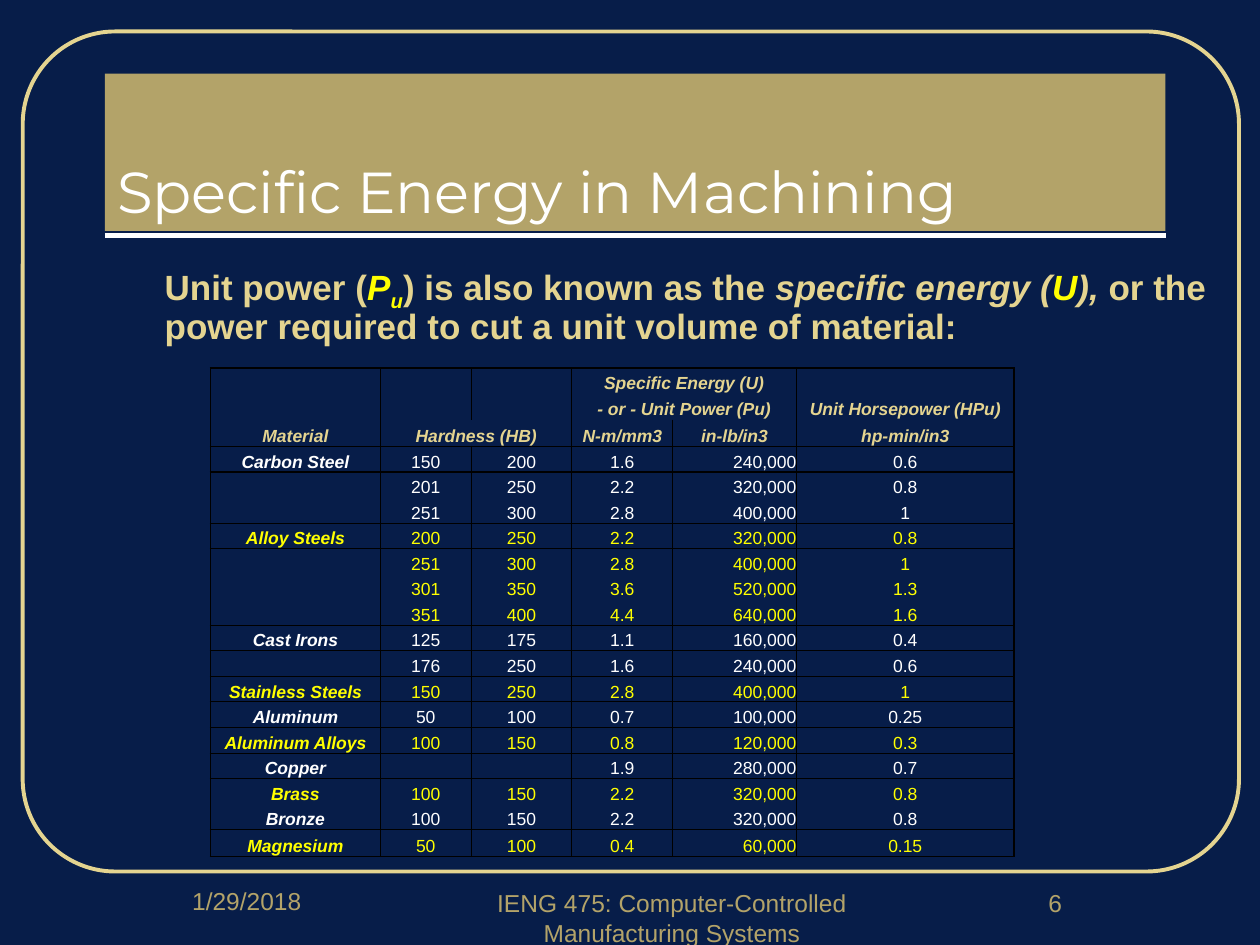
from dataclasses import dataclass

from lxml import etree
from pptx import Presentation
from pptx.dml.color import RGBColor
from pptx.enum.shapes import MSO_CONNECTOR, MSO_SHAPE
from pptx.enum.text import MSO_ANCHOR, PP_ALIGN
from pptx.oxml.ns import qn
from pptx.util import Pt

NAVY = RGBColor(0x07, 0x1D, 0x49)
GOLD = RGBColor(0xB3, 0xA3, 0x69)
SAND = RGBColor(0xE4, 0xD4, 0x90)
YELLOW = RGBColor(0xFF, 0xFF, 0x00)
WHITE = RGBColor(0xFF, 0xFF, 0xFF)

LEFT, CENTER, RIGHT = PP_ALIGN.LEFT, PP_ALIGN.CENTER, PP_ALIGN.RIGHT
BOTTOM = MSO_ANCHOR.BOTTOM
STRAIGHT = MSO_CONNECTOR.STRAIGHT
RECTANGLE, ROUNDED = MSO_SHAPE.RECTANGLE, MSO_SHAPE.ROUNDED_RECTANGLE

NO_STYLE_NO_GRID = "{2D5ABB26-0587-4C30-8999-92F81FD0307C}"


@dataclass(frozen=True)
class Box:
    left: float
    top: float
    width: float
    height: float

    def lengths(self):
        return Pt(self.left), Pt(self.top), Pt(self.width), Pt(self.height)


@dataclass(frozen=True)
class Style:
    size: float
    color: RGBColor
    font: str = "Arial"
    bold: bool = False
    italic: bool = False
    subscript: bool = False


@dataclass(frozen=True)
class Material:
    name: str
    readings: tuple
    closes_group: bool = True


@dataclass(frozen=True)
class Footer:
    text: str
    box: Box


FOOTERS = (
    Footer("1/29/2018", Box(60, 503, 162, 36)),
    Footer("IENG 475: Computer-Controlled Manufacturing Systems", Box(258, 504, 252, 36)),
    Footer("6", Box(540, 504, 126, 36)),
)

DEFINITION = (
    ("Unit power (", Style(20, SAND, bold=True)),
    ("P", Style(20, YELLOW, bold=True, italic=True)),
    ("u", Style(20, YELLOW, bold=True, italic=True, subscript=True)),
    (") is also known as the ", Style(20, SAND, bold=True)),
    ("specific energy (", Style(20, SAND, bold=True, italic=True)),
    ("U", Style(20, YELLOW, bold=True, italic=True)),
    ("), ", Style(20, SAND, bold=True, italic=True)),
    ("or the power required to cut a unit volume of material:", Style(20, SAND, bold=True)),
)

HEADINGS = (
    ("", "", "", "Specific Energy (U)", "", ""),
    ("", "", "", "- or - Unit Power (Pu)", "", "Unit Horsepower (HPu)"),
    ("Material", "Hardness (HB)", "", "N-m/mm3", "in-lb/in3", "hp-min/in3"),
)
HEADING_SPANS = ((0, 3), (1, 3), (2, 1))

MATERIALS = (
    Material("Carbon Steel", (
        ("150", "200", "1.6", "240,000", "0.6"),
        ("201", "250", "2.2", "320,000", "0.8"),
        ("251", "300", "2.8", "400,000", "1"))),
    Material("Alloy Steels", (
        ("200", "250", "2.2", "320,000", "0.8"),
        ("251", "300", "2.8", "400,000", "1"),
        ("301", "350", "3.6", "520,000", "1.3"),
        ("351", "400", "4.4", "640,000", "1.6"))),
    Material("Cast Irons", (
        ("125", "175", "1.1", "160,000", "0.4"),
        ("176", "250", "1.6", "240,000", "0.6"))),
    Material("Stainless Steels", (("150", "250", "2.8", "400,000", "1"),)),
    Material("Aluminum", (("50", "100", "0.7", "100,000", "0.25"),), False),
    Material("Aluminum Alloys", (("100", "150", "0.8", "120,000", "0.3"),)),
    Material("Copper", (("", "", "1.9", "280,000", "0.7"),), False),
    Material("Brass", (("100", "150", "2.2", "320,000", "0.8"),), False),
    Material("Bronze", (("100", "150", "2.2", "320,000", "0.8"),)),
    Material("Magnesium", (("50", "100", "0.4", "60,000", "0.15"),)),
)

COLUMN_WIDTHS = (97.2, 51.8, 57.6, 57.6, 70.6, 124.6)
ROW_HEIGHTS = (14.8, 14.8, 15.3) + (14.6,) * 15 + (15.4,)
COLUMN_RULES = {0: 1, 1: 0.5, 3: 0.5, 5: 0.5, 6: 1}
POUND_COLUMN = 4


def format_run(run, style: Style) -> None:
    font = run.font
    font.name, font.size = style.font, Pt(style.size)
    font.bold, font.italic = style.bold, style.italic
    font.color.rgb = style.color
    if style.subscript:
        run._r.get_or_add_rPr().set("baseline", "-25000")


def write(frame, text: str, style: Style, align) -> None:
    frame.word_wrap = True
    frame.text = text
    paragraph = frame.paragraphs[0]
    paragraph.alignment = align
    for run in paragraph.runs:
        format_run(run, style)


def add_frame(slide) -> None:
    border = slide.shapes.add_shape(ROUNDED, *Box(13, 18, 695, 480).lengths())
    border.shadow.inherit = False
    border.adjustments[0] = 0.11
    border.fill.background()
    border.line.color.rgb, border.line.width = SAND, Pt(2.25)
    underline = slide.shapes.add_connector(STRAIGHT, Pt(60), Pt(134.6), Pt(666), Pt(134.6))
    underline.line.color.rgb, underline.line.width = WHITE, Pt(3)
    etree.SubElement(underline._element.spPr, qn("a:effectLst"))


def add_title(slide) -> None:
    title = slide.shapes.add_shape(RECTANGLE, *Box(60, 42, 606, 90).lengths())
    title.shadow.inherit = False
    title.fill.solid()
    title.fill.fore_color.rgb = GOLD
    title.line.fill.background()
    title.text_frame.vertical_anchor = BOTTOM
    write(title.text_frame, "Specific Energy in Machining",
          Style(33, WHITE, font="Montserrat"), LEFT)


def add_definition(slide) -> None:
    definition = slide.shapes.add_textbox(*Box(60, 148.3, 648, 57).lengths())
    definition.text_frame.word_wrap = True
    paragraph = definition.text_frame.paragraphs[0]
    paragraph.line_spacing = 0.9
    paragraph.space_before = Pt(4)
    paragraph._p.get_or_add_pPr().set("marL", str(Pt(27)))
    for text, style in DEFINITION:
        run = paragraph.add_run()
        run.text = text
        format_run(run, style)


def rule_cell(cell, weights: dict) -> None:
    properties = cell._tc.get_or_add_tcPr()
    for side, weight in weights.items():
        if weight:
            rule = etree.SubElement(properties, qn(f"a:{side}"), w=str(Pt(weight)))
            fill = etree.SubElement(rule, qn("a:solidFill"))
            etree.SubElement(fill, qn("a:srgbClr"), val="000000")


def fill_cell(cell, text: str, style: Style, align) -> None:
    cell.fill.background()
    cell.margin_left = cell.margin_right = cell.margin_top = cell.margin_bottom = 0
    cell.vertical_anchor = BOTTOM
    if text:
        write(cell.text_frame, text, style, align)
    else:
        etree.SubElement(cell.text_frame.paragraphs[0]._p, qn("a:endParaRPr"),
                         sz=str(style.size * 100))


def add_energy_table(slide) -> None:
    heading_style = Style(10, SAND, bold=True, italic=True)
    rows = [(heading, heading_style, heading_style) for heading in HEADINGS]
    row_rules = {0: 1, len(HEADINGS): 1}
    for index, material in enumerate(MATERIALS):
        color = YELLOW if index % 2 else WHITE
        for position, reading in enumerate(material.readings):
            name = "" if position else material.name
            rows.append(((name, *reading), Style(10, color, bold=True, italic=True),
                         Style(10, color)))
        if material.closes_group:
            row_rules[len(rows)] = 0.5
    row_rules[len(rows)] = 1

    box = Box(120.2, 210.2, sum(COLUMN_WIDTHS), sum(ROW_HEIGHTS))
    table = slide.shapes.add_table(len(rows), len(COLUMN_WIDTHS), *box.lengths()).table
    table.first_row = table.horz_banding = False
    table._tbl.tblPr.find(qn("a:tableStyleId")).text = NO_STYLE_NO_GRID
    for column, width in zip(table.columns, COLUMN_WIDTHS):
        column.width = Pt(width)
    for row, height in zip(table.rows, ROW_HEIGHTS):
        row.height = Pt(height)
    for r, c in HEADING_SPANS:
        table.cell(r, c).merge(table.cell(r, c + 1))

    for r, (texts, name_style, value_style) in enumerate(rows):
        for c, text in enumerate(texts):
            cell = table.cell(r, c)
            rule_cell(cell, {"lnL": COLUMN_RULES.get(c),
                             "lnR": COLUMN_RULES.get(c + cell.span_width),
                             "lnT": row_rules.get(r), "lnB": row_rules.get(r + 1)})
            numeric = c == POUND_COLUMN and r >= len(HEADINGS)
            fill_cell(cell, text, value_style if c else name_style,
                      RIGHT if numeric else CENTER)


def main() -> None:
    deck = Presentation()
    deck.slide_width, deck.slide_height = Pt(720), Pt(540)
    slide = deck.slides.add_slide(deck.slide_layouts[6])
    slide.background.fill.solid()
    slide.background.fill.fore_color.rgb = NAVY
    add_frame(slide)
    for footer in FOOTERS:
        note = slide.shapes.add_textbox(*footer.box.lengths())
        write(note.text_frame, footer.text, Style(14, GOLD), CENTER)
    add_title(slide)
    add_definition(slide)
    add_energy_table(slide)
    deck.save("out.pptx")


if __name__ == "__main__":
    main()
